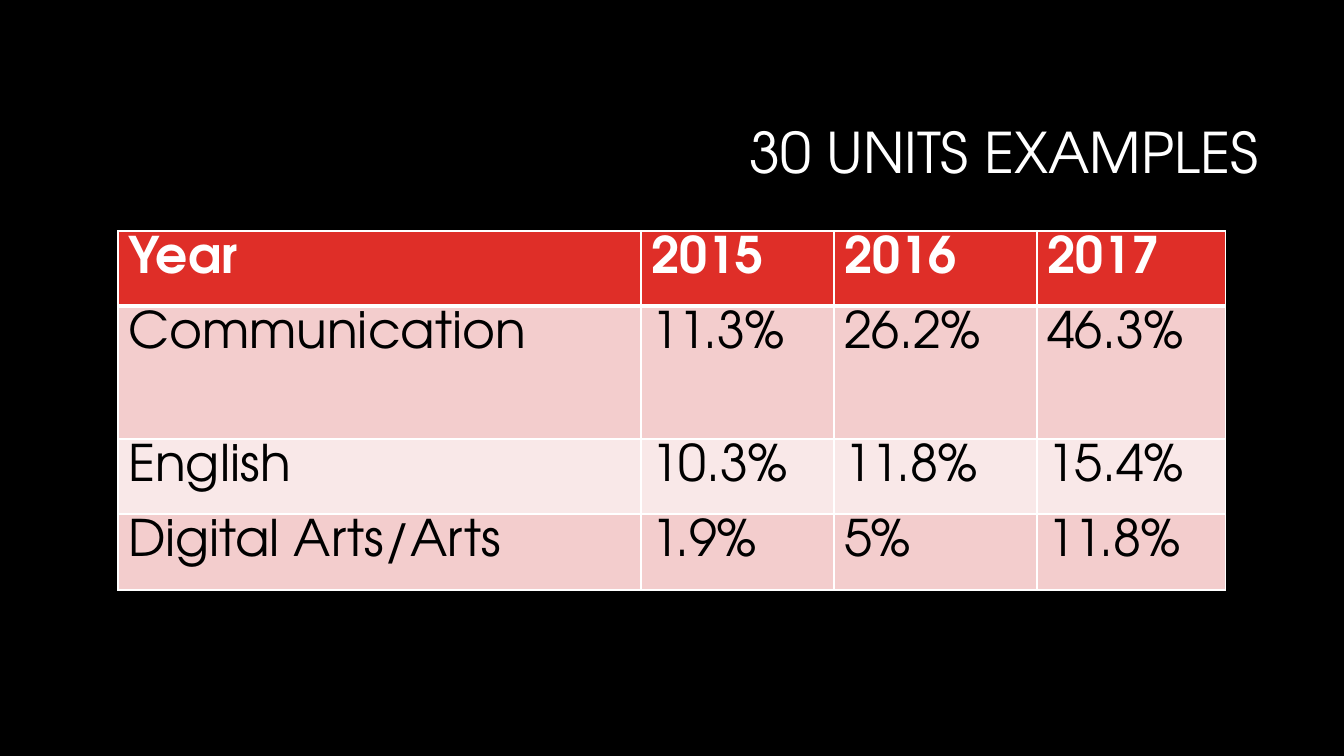
import pptx
import pptx.util
import pptx.dml.color
import pptx.enum.text
from lxml import etree

TITLE = "30 UNITS EXAMPLES"
ROWS = [
    ("Year", "2015", "2016", "2017"),
    ("Communication", "11.3%", "26.2%", "46.3%"),
    ("English", "10.3%", "11.8%", "15.4%"),
    ("Digital Arts/Arts", "1.9%", "5%", "11.8%"),
]
COLUMN_WIDTHS = (523, 193, 203, 189)
ROW_HEIGHTS = (75, 133, 75, 76)
TABLE_LEFT, TABLE_TOP = 118, 231

FONT = "TeX Gyre Adventor"
BLACK, WHITE, RED = "000000", "FFFFFF", "DF2E28"
BANDS = ("F9E8E8", "F3CDCD")
EMU_PER_PX = 914400 / 100.8


def px(length):
    return pptx.util.Emu(round(length * EMU_PER_PX))


def color(value):
    return pptx.dml.color.RGBColor.from_string(value)


def write(paragraph, text, size, text_color, bold=False):
    run = paragraph.add_run()
    run.text = text
    run.font.name = FONT
    run.font.size = pptx.util.Pt(size)
    run.font.bold = bold
    run.font.color.rgb = color(text_color)


def set_borders(cell, bottom_width, top_width):
    """Draw white lines on all four sides; widths are in points."""
    properties = cell._tc.get_or_add_tcPr()
    widths = {"lnL": 1, "lnR": 1, "lnT": top_width, "lnB": bottom_width}
    for position, (side, width) in enumerate(widths.items()):
        line = etree.Element(pptx.oxml.ns.qn(f"a:{side}"), w=str(pptx.util.Pt(width)))
        fill = etree.SubElement(line, pptx.oxml.ns.qn("a:solidFill"))
        etree.SubElement(fill, pptx.oxml.ns.qn("a:srgbClr"), val=WHITE)
        properties.insert(position, line)


def add_title(slide):
    shape = slide.shapes.add_textbox(px(319), px(84), px(949), px(142))
    frame = shape.text_frame
    frame.word_wrap = True
    frame.vertical_anchor = pptx.enum.text.MSO_ANCHOR.MIDDLE
    paragraph = frame.paragraphs[0]
    paragraph.alignment = pptx.enum.text.PP_ALIGN.RIGHT
    paragraph.line_spacing = 0.9
    write(paragraph, TITLE, 40, WHITE)


def add_units_table(slide):
    table = slide.shapes.add_table(
        len(ROWS), len(COLUMN_WIDTHS), px(TABLE_LEFT), px(TABLE_TOP),
        px(sum(COLUMN_WIDTHS)), px(sum(ROW_HEIGHTS))).table
    for column, width in zip(table.columns, COLUMN_WIDTHS):
        column.width = px(width)
    for row_index, (texts, height) in enumerate(zip(ROWS, ROW_HEIGHTS)):
        table.rows[row_index].height = px(height)
        header = row_index == 0
        for column_index, text in enumerate(texts):
            cell = table.cell(row_index, column_index)
            cell.fill.solid()
            cell.fill.fore_color.rgb = color(RED if header else BANDS[row_index % 2])
            set_borders(cell, 3 if header else 1, 3 if row_index == 1 else 1)
            write(cell.text_frame.paragraphs[0], text, 36,
                  WHITE if header else BLACK, header)


def main():
    presentation = pptx.Presentation()
    presentation.slide_width, presentation.slide_height = px(1344), px(756)
    slide = presentation.slides.add_slide(presentation.slide_layouts[6])
    slide.background.fill.solid()
    slide.background.fill.fore_color.rgb = color(BLACK)
    add_title(slide)
    add_units_table(slide)
    presentation.save("out.pptx")


if __name__ == "__main__":
    main()
